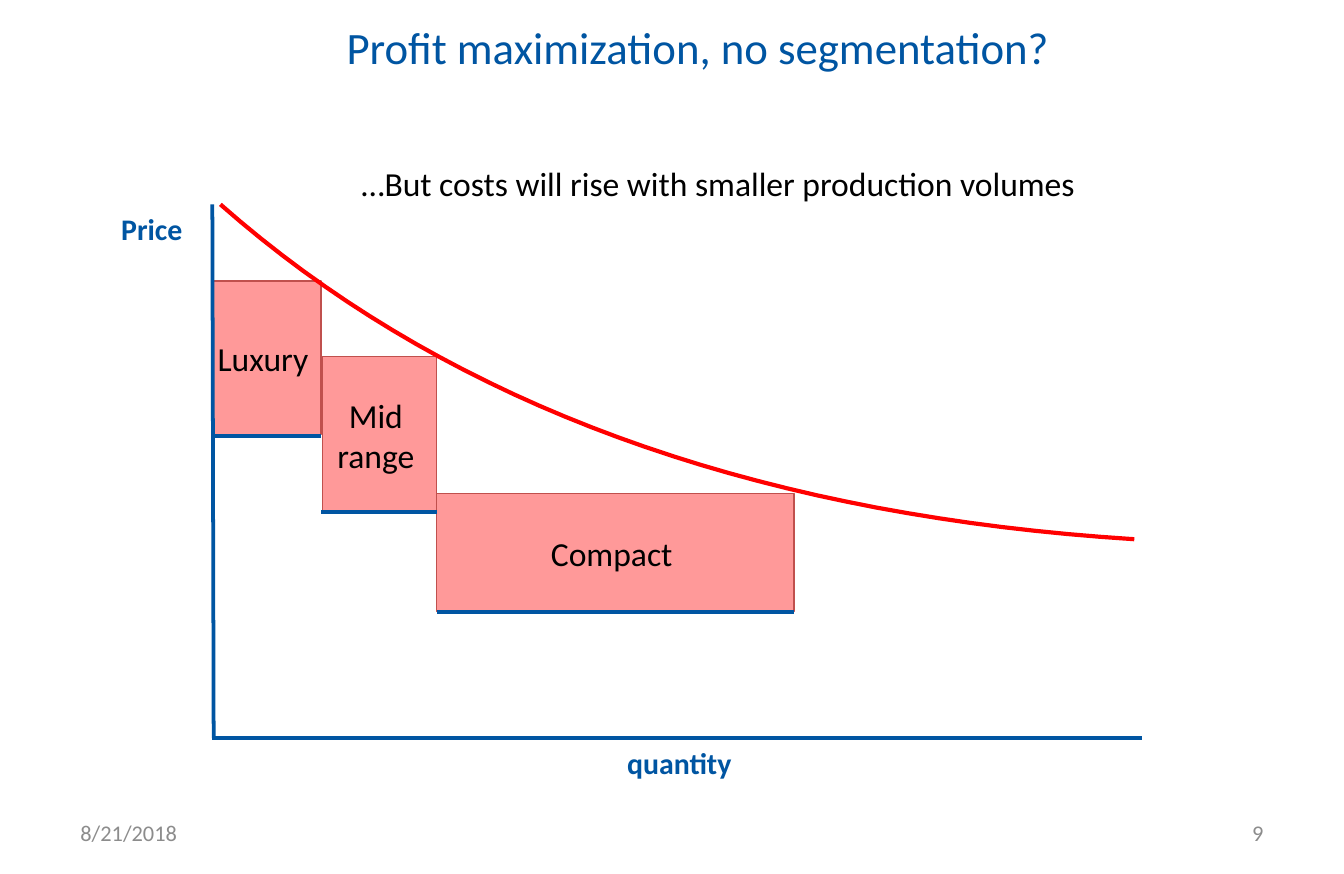
import pptx
import pptx.dml.color
import pptx.enum.shapes
import pptx.enum.text
import pptx.oxml
import pptx.util

BLUE = pptx.dml.color.RGBColor(0x00, 0x55, 0xA2)
PINK = pptx.dml.color.RGBColor(0xFF, 0x99, 0x99)
BRICK = pptx.dml.color.RGBColor(0xC0, 0x50, 0x4D)
RED = pptx.dml.color.RGBColor(0xFF, 0x00, 0x00)
BLACK = pptx.dml.color.RGBColor(0x00, 0x00, 0x00)
GRAY = pptx.dml.color.RGBColor(0x8C, 0x8C, 0x8C)

LEFT = pptx.enum.text.PP_ALIGN.LEFT
CENTER = pptx.enum.text.PP_ALIGN.CENTER
RIGHT = pptx.enum.text.PP_ALIGN.RIGHT
TOP = pptx.enum.text.MSO_ANCHOR.TOP
MIDDLE = pptx.enum.text.MSO_ANCHOR.MIDDLE

PX = 9144
FONT = "Calibri"

SEGMENTS = [
    ("Luxury ", 158, 209, 81, 114),
    ("Mid \nrange ", 240, 265, 85, 117),
    ("Compact ", 325, 367, 266, 88),
]
LABELS = [
    ("Profit maximization, no segmentation?", (248, 2, 752, 66), 24, BLUE, False, LEFT, MIDDLE, True),
    ("8/21/2018", (50, 602, 233, 35), 12, GRAY, False, LEFT, MIDDLE, True),
    ("9", (717, 602, 233, 35), 12, GRAY, False, RIGHT, MIDDLE, True),
    ("Price", (80, 152, 66, 37), 16, BLUE, True, CENTER, TOP, False),
    ("quantity", (456, 549, 99, 37), 16, BLUE, True, CENTER, TOP, False),
    ("…But costs will rise with smaller production volumes", (259, 116, 672, 40), 18, BLACK, False, LEFT, TOP, True),
]
AXES = [(158, 152, 159, 549), (158, 549, 850, 549)]
COST_LINES = [(158, 324, 239, 324), (239, 381, 325, 381), (325, 455, 591, 455)]
DEMAND_START, DEMAND_BEND, DEMAND_END = (844, 401), (416, 374), (164, 152)
DEMAND_STEPS = 34


def emu(*lengths):
    return [round(length * PX) for length in lengths]


def write(box, text, size, color, bold, align, anchor, wrap):
    frame = box.text_frame
    frame.text = text
    frame.word_wrap = wrap
    frame.vertical_anchor = anchor
    for para in frame.paragraphs:
        para.alignment = align
        for span in para.runs:
            span.font.name = FONT
            span.font.size = pptx.util.Pt(size)
            span.font.bold = bold
            span.font.color.rgb = color


def add_segment(page, text, *place):
    box = page.shapes.add_shape(pptx.enum.shapes.MSO_SHAPE.RECTANGLE, *emu(*place))
    box.shadow.inherit = False
    box.fill.solid()
    box.fill.fore_color.rgb = PINK
    box.line.color.rgb = BRICK
    box.line.width = pptx.util.Pt(0.75)
    write(box, text, 18, BLACK, False, CENTER, MIDDLE, False)


def add_line(page, ends):
    line = page.shapes.add_connector(pptx.enum.shapes.MSO_CONNECTOR.STRAIGHT, *emu(*ends))
    line.line.color.rgb = BLUE
    line.line.width = pptx.util.Pt(2)
    properties = line._element.spPr
    properties.append(properties.makeelement(pptx.oxml.ns.qn("a:effectLst"), {}))


def demand_point(step):
    t = step / DEMAND_STEPS
    return emu(*(
        (1 - t) ** 2 * start + 2 * t * (1 - t) * bend + t ** 2 * end
        for start, bend, end in zip(DEMAND_START, DEMAND_BEND, DEMAND_END)
    ))


def add_demand_curve(page):
    points = [demand_point(step) for step in range(DEMAND_STEPS + 1)]
    builder = page.shapes.build_freeform(*points[0], scale=1)
    builder.add_line_segments(points[1:], close=False)
    curve = builder.convert_to_shape()
    curve.shadow.inherit = False
    curve.fill.background()
    curve.line.color.rgb = RED
    curve.line.width = pptx.util.Pt(2.25)


def main():
    deck = pptx.Presentation()
    deck.slide_width, deck.slide_height = emu(1000, 650)
    page = deck.slides.add_slide(deck.slide_layouts[6])
    for segment in SEGMENTS:
        add_segment(page, *segment)
    for ends in AXES:
        add_line(page, ends)
    add_demand_curve(page)
    for ends in COST_LINES:
        add_line(page, ends)
    for text, place, *style in LABELS:
        write(page.shapes.add_textbox(*emu(*place)), text, *style)
    deck.save("out.pptx")


if __name__ == "__main__":
    main()
